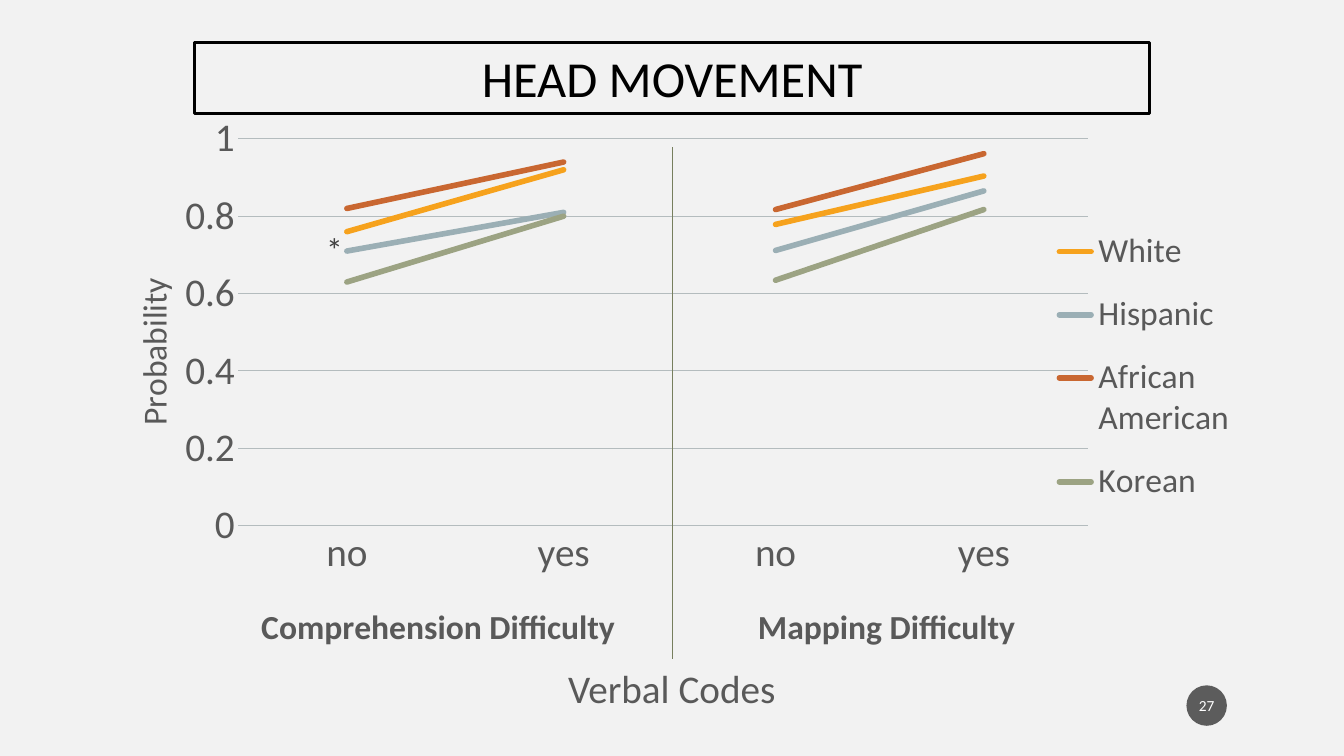
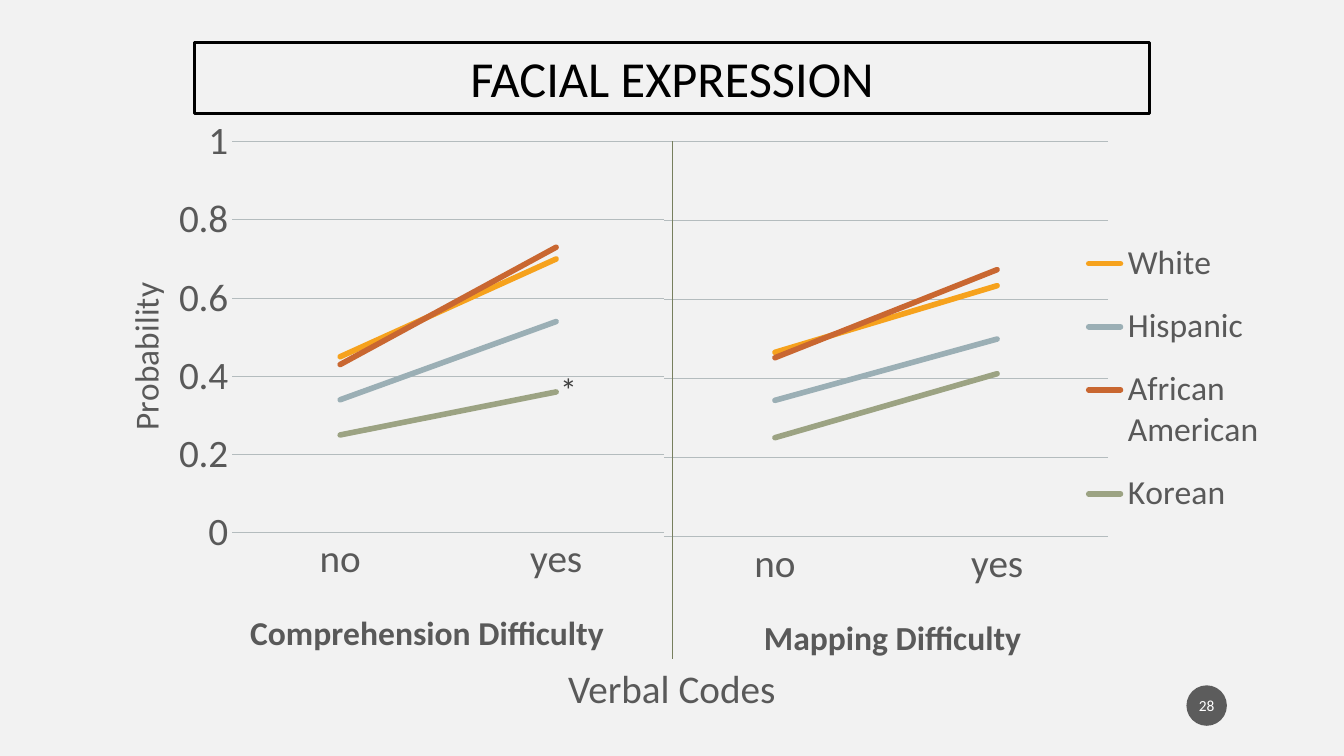
"""Build two slides that compare verbal codes across groups."""
from lxml import etree
from pptx import Presentation
from pptx import util as u
from pptx.chart import data
from pptx.dml.color import RGBColor
from pptx.enum import chart as ch, shapes, text
from pptx.oxml import ns

COLORS = {
    "page": "F2F2F2", "ink": "000000", "body": "595959", "grid": "B4BCBE",
    "divider": "777F5E", "badge": "1D1D1D", "white": "FFFFFF", "star": "404040",
}
GROUPS = {
    "White": "F6A21D", "Hispanic": "9BAFB5",
    "African American": "C96731", "Korean": "9CA383",
}
FONT = "Calibri"
CHART_TOP = 2.87


def rgb(name):
    return RGBColor.from_string(COLORS.get(name, name))


def style(font, size, color, bold=False):
    font.name, font.size, font.bold = FONT, u.Pt(size), bold
    font.color.rgb = rgb(color)


def no_fill(parent, before=None):
    sp_pr = etree.Element(ns.qn("c:spPr"))
    etree.SubElement(sp_pr, ns.qn("a:noFill"))
    ln = etree.SubElement(sp_pr, ns.qn("a:ln"))
    etree.SubElement(ln, ns.qn("a:noFill"))
    if before is None:
        parent.append(sp_pr)
    else:
        before.addprevious(sp_pr)


def set_layout(parent, frame, spot, inner=False):
    """Place a chart part at slide position spot, in cm, inside the chart frame."""
    old = parent.find(ns.qn("c:layout"))
    if old is not None:
        parent.remove(old)
    layout = etree.Element(ns.qn("c:layout"))
    manual = etree.SubElement(layout, ns.qn("c:manualLayout"))
    left, top, width, height = frame
    values = [("xMode", "edge"), ("yMode", "edge"),
              ("x", (spot[0] - left) / width), ("y", (spot[1] - top) / height)]
    if inner:
        values.insert(0, ("layoutTarget", "inner"))
    if len(spot) == 4:
        values += [("w", spot[2] / width), ("h", spot[3] / height)]
    for tag, value in values:
        etree.SubElement(manual, ns.qn("c:" + tag)).set("val", str(value))
    overlay = parent.find(ns.qn("c:overlay"))
    if overlay is None:
        parent.insert(0, layout)
    else:
        overlay.addprevious(layout)


class Deck:
    """Hold the shared style and the current slide."""

    def __init__(self):
        self.prs = Presentation()
        self.prs.slide_width, self.prs.slide_height = u.Cm(33.87), u.Cm(19.05)

    def slide(self, title):
        self.s = self.prs.slides.add_slide(self.prs.slide_layouts[5])
        fill = self.s.background.fill
        fill.solid()
        fill.fore_color.rgb = rgb("page")
        sp = self.s.shapes.title
        sp.left, sp.top, sp.width, sp.height = map(u.Cm, (4.9, 1.07, 24.08, 1.8))
        sp.line.color.rgb, sp.line.width = rgb("ink"), u.Pt(2.25)
        self.label(sp, title, 36, "ink", text.MSO_ANCHOR.TOP)

    def label(self, sp, words, size, color, anchor):
        tf = sp.text_frame
        tf.word_wrap, tf.auto_size = True, text.MSO_AUTO_SIZE.NONE
        tf.vertical_anchor = anchor
        p = tf.paragraphs[0]
        p.text, p.alignment = words, text.PP_ALIGN.CENTER
        style(p.font, size, color)

    def caption(self, words):
        sp = self.s.shapes.add_textbox(*map(u.Cm, (7.62, 16.61, 18.62, 1.45)))
        self.label(sp, words, 28, "body", text.MSO_ANCHOR.TOP)

    def divider(self, top):
        x = u.Cm(16.94)
        line = self.s.shapes.add_connector(
            shapes.MSO_CONNECTOR.STRAIGHT, x, u.Cm(top), x, u.Cm(16.61))
        line.line.color.rgb, line.line.width = rgb("divider"), u.Pt(0.5)
        etree.SubElement(line._element.spPr, ns.qn("a:effectLst"))

    def badge(self, number):
        sp = self.s.shapes.add_shape(
            shapes.MSO_SHAPE.OVAL, *map(u.Cm, (29.9, 17.27, 1.02, 1.02)))
        sp.shadow.inherit = False
        sp.fill.solid()
        sp.fill.fore_color.rgb = rgb("badge")
        color = sp._element.spPr.find(ns.qn("a:solidFill"))[0]
        etree.SubElement(color, ns.qn("a:alpha")).set("val", "70000")
        sp.line.fill.background()
        tf = sp.text_frame
        tf.margin_left = tf.margin_right = u.Cm(0.05)
        self.label(sp, str(number), 11, "white", text.MSO_ANCHOR.MIDDLE)

    def axis_title(self, axis, words, frame, spot, bold=False):
        title = axis.axis_title
        tf = title.text_frame
        p = tf.paragraphs[0]
        p.text = words
        style(p.font, 24, "body", bold)
        set_layout(title._element, frame, spot)
        return tf

    def line_chart(self, values, box, plot, name, name_at, top=1,
                   scale_at=None, legend_at=None, star=None):
        left, width, height = box
        frame = (left, CHART_TOP, width, height)
        cd = data.CategoryChartData()
        cd.categories = ["no", "yes"]
        for group, pair in zip(GROUPS, values):
            cd.add_series(group, pair)
        chart = self.s.shapes.add_chart(
            ch.XL_CHART_TYPE.LINE, *map(u.Cm, frame), cd).chart
        chart.has_title = chart.has_legend = False
        style(chart.font, 28, "body")
        root = chart.element
        no_fill(root, root.find(ns.qn("c:txPr")))
        area = root.find(".//" + ns.qn("c:plotArea"))
        no_fill(area)
        set_layout(area, frame, plot, inner=True)

        for series, color in zip(chart.plots[0].series, GROUPS.values()):
            series.smooth = False
            series.marker.style = ch.XL_MARKER_STYLE.NONE
            series.format.line.width = u.Pt(4)
            series.format.line.color.rgb = rgb(color)
        for ln in root.xpath(".//c:ser/c:spPr/a:ln"):
            ln.set("cap", "rnd")

        cat, val = chart.category_axis, chart.value_axis
        for axis in (cat, val):
            axis.major_tick_mark = axis.minor_tick_mark = ch.XL_TICK_MARK.NONE
            axis.format.line.fill.background()
            style(axis.tick_labels.font, 28, "body")
        self.axis_title(cat, name, frame, name_at, bold=True)
        val.minimum_scale, val.maximum_scale, val.major_unit = 0, top, top / 5
        grid = val.major_gridlines.format.line
        grid.color.rgb, grid.width = rgb("grid"), u.Pt(0.75)
        if scale_at:
            tf = self.axis_title(val, "Probability", frame, scale_at)
            body = tf._txBody.find(ns.qn("a:bodyPr"))
            body.set("rot", "-5400000")
            body.set("vert", "horz")
        else:
            val.visible = False

        if legend_at:
            chart.has_legend = True
            legend = chart.legend
            legend.position = ch.XL_LEGEND_POSITION.RIGHT
            legend.include_in_layout = False
            style(legend.font, 24, "body")
            set_layout(legend._element, frame, legend_at)
        if star:
            group, point, side = star
            label = chart.plots[0].series[group].points[point].data_label
            p = label.text_frame.paragraphs[0]
            p.text = "*"
            style(p.font, 24, "star")
            label.position = side


SLIDES = [
    dict(
        title="HEAD MOVEMENT", number=27, divider=3.71,
        comprehension=dict(
            values=[(0.76, 0.92), (0.71, 0.81), (0.82, 0.94), (0.63, 0.8)],
            box=(2.24, 14.71, 13.94), plot=(6.01, 3.5, 10.93, 9.75),
            name_at=(6.43, 15.07), scale_at=(3.15, 6.85),
            star=(1, 0, ch.XL_LABEL_POSITION.LEFT)),
        mapping=dict(
            values=[(81, 94), (74, 90), (85, 100), (66, 85)], top=104,
            box=(16.43, 15.19, 13.94), plot=(16.92, 3.5, 10.5, 9.75),
            name_at=(18.95, 15.07), legend_at=(26.46, 5.27, 4.75, 7.95))),
    dict(
        title="FACIAL EXPRESSION", number=28, divider=3.56,
        comprehension=dict(
            values=[(0.45, 0.7), (0.34, 0.54), (0.43, 0.73), (0.25, 0.36)],
            box=(2.24, 14.86, 13.89), plot=(5.85, 3.58, 10.89, 9.96),
            name_at=(6.15, 15.37), scale_at=(2.95, 7.06),
            star=(3, 1, ch.XL_LABEL_POSITION.RIGHT)),
        mapping=dict(
            values=[(69, 94), (51, 74), (67, 100), (37, 61)], top=148,
            box=(16.71, 15.62, 14.25), plot=(16.73, 3.57, 11.2, 9.95),
            name_at=(19.1, 15.35), legend_at=(27.2, 5.57, 4.75, 7.95))),
]


def main():
    deck = Deck()
    for item in SLIDES:
        deck.slide(item["title"])
        deck.line_chart(name="Comprehension Difficulty", **item["comprehension"])
        deck.line_chart(name="Mapping Difficulty", **item["mapping"])
        deck.divider(item["divider"])
        deck.caption("Verbal Codes")
        deck.badge(item["number"])
    deck.prs.save("out.pptx")


if __name__ == "__main__":
    main()
